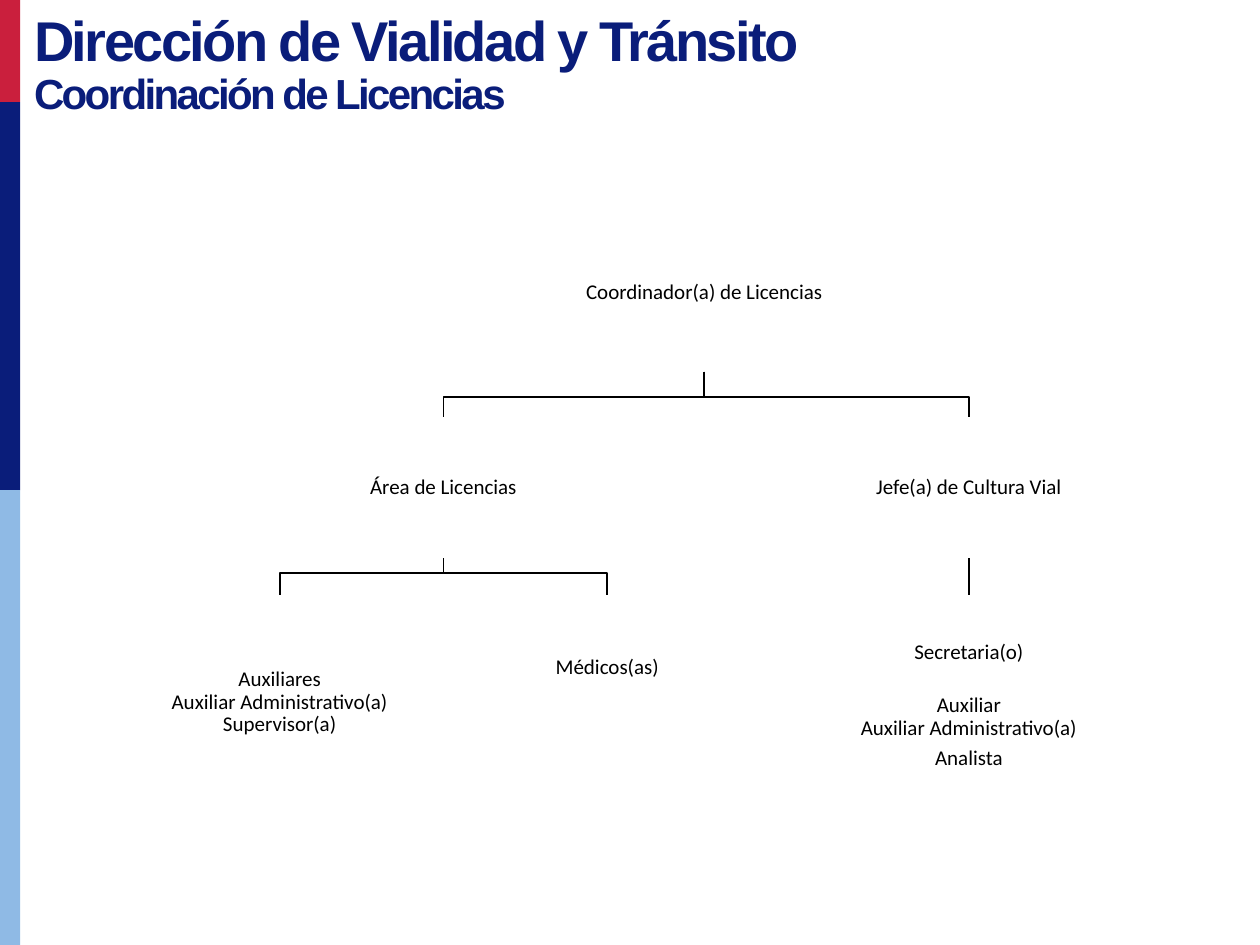
from lxml import etree
from pptx import Presentation
from pptx import util as u
from pptx.dml.color import RGBColor
from pptx.enum import shapes, text
from pptx.oxml.ns import qn

NAVY, RED, SKY = "0A1D7A", "CA1F3D", "8FBAE5"
BLACK, WHITE = "000000", "FFFFFF"


def color(code):
    return RGBColor.from_string(code)


def write(para, words, font="Calibri", size=12, ink=BLACK, bold=False,
          align=text.PP_ALIGN.CENTER, before=0, track=None):
    """Put one formatted run into a paragraph."""
    para.alignment = align
    para.line_spacing = 0.9
    para.space_before = u.Pt(before)
    para.space_after = u.Pt(0)
    run = para.add_run()
    run.text = words
    run.font.name, run.font.size, run.font.bold = font, u.Pt(size), bold
    run.font.color.rgb = color(ink)
    if track is not None:
        run._r.get_or_add_rPr().set("spc", str(int(track * 100)))


class Chart:
    """Style and current slide of the organisation chart."""
    inset = 0.01
    width = 1

    def __init__(self, slide):
        self.slide = slide

    def rect(self, x, y, w, h, fill):
        box = self.slide.shapes.add_shape(
            shapes.MSO_SHAPE.RECTANGLE, *map(u.Inches, (x, y, w, h)))
        box.shadow.inherit = False
        box.fill.solid()
        box.fill.fore_color.rgb = color(fill)
        box.line.fill.background()
        return box

    def title(self, x, y, w, h, lines):
        box = self.slide.shapes.title
        box.left, box.top, box.width, box.height = map(u.Inches, (x, y, w, h))
        frame = box.text_frame
        frame.word_wrap = True
        frame.auto_size = text.MSO_AUTO_SIZE.SHAPE_TO_FIT_TEXT
        frame.vertical_anchor = text.MSO_ANCHOR.TOP
        for i, (words, size) in enumerate(lines):
            para = frame.add_paragraph() if i else frame.paragraphs[0]
            write(para, words, font="Arial", size=size, ink=NAVY, bold=True,
                  align=text.PP_ALIGN.LEFT, track=-1.5)

    def node(self, mid, y, w, h, lines, foot=0):
        """Box centred on mid; lines are (words, space before)."""
        box = self.rect(mid - w / 2, y, w, h, WHITE)
        frame = box.text_frame
        frame.word_wrap = True
        frame.vertical_anchor = text.MSO_ANCHOR.MIDDLE
        frame.margin_left = frame.margin_right = u.Inches(self.inset)
        frame.margin_top = u.Inches(self.inset)
        frame.margin_bottom = u.Inches(self.inset + foot)
        for i, (words, gap) in enumerate(lines):
            para = frame.add_paragraph() if i else frame.paragraphs[0]
            write(para, words, before=gap)
        return box

    def ink(self, line):
        line.color.rgb = color(BLACK)
        line.width = u.Pt(self.width)

    def link(self, top, low):
        line = self.slide.shapes.add_connector(
            shapes.MSO_CONNECTOR.STRAIGHT, 0, 0, 0, 0)
        line.begin_connect(top, 2)
        line.end_connect(low, 0)
        etree.SubElement(line._element.spPr, qn("a:effectLst"))
        self.ink(line.line)

    def elbow(self, top, low, bend):
        """Line from a box down to bend, across, and down to another box."""
        start = top.left + top.width // 2
        end = low.left + low.width // 2
        turn = u.Inches(bend)
        path = self.slide.shapes.build_freeform(start, top.top + top.height)
        path.add_line_segments(
            [(start, turn), (end, turn), (end, low.top)], close=False)
        line = path.convert_to_shape()
        line.shadow.inherit = False
        line.fill.background()
        self.ink(line.line)


def main():
    deck = Presentation()
    deck.slide_width, deck.slide_height = u.Inches(10), u.Inches(7.5)
    chart = Chart(deck.slides.add_slide(deck.slide_layouts[5]))

    # Side band
    edges = (0, 0.81, 3.89, 7.5)
    for top, end, fill in zip(edges, edges[1:], (RED, NAVY, SKY)):
        chart.rect(0, top, 0.16, end - top, fill)

    # Title
    chart.title(0.17, 0.05, 7.46, 0.95,
                [("Dirección de Vialidad y Tránsito", 32),
                 ("Coordinación de Licencias", 24)])

    # Boxes, level by level
    head = chart.node(5.59, 1.7, 3.13, 1.25,
                      [("Coordinador(a) de Licencias", 0)])
    area, chief = [chart.node(mid, 3.31, 2.71, 1.12, [(words, 0)])
                   for mid, words in ((3.52, "Área de Licencias"),
                                      (7.69, "Jefe(a) de Cultura Vial"))]
    aides = chart.node(2.22, 4.72, 2.24, 1.89,
                       [("Auxiliares", 0), ("Auxiliar Administrativo(a)", 0),
                        ("Supervisor(a)", 0)], foot=0.18)
    medics = chart.node(4.82, 4.72, 2.24, 1.16, [("Médicos(as)", 0)])
    staff = chart.node(7.69, 4.72, 2.24, 1.94,
                       [("Secretaria(o)", 0), ("Auxiliar", 17.4),
                        ("Auxiliar Administrativo(a)", 0),
                        ("Analista", 4.2)], foot=0.18)

    # Lines
    for top, lows, bend in ((head, (area, chief), 3.15),
                            (area, (aides, medics), 4.55)):
        for low in lows:
            chart.elbow(top, low, bend)
    chart.link(chief, staff)

    deck.save("out.pptx")


if __name__ == "__main__":
    main()
